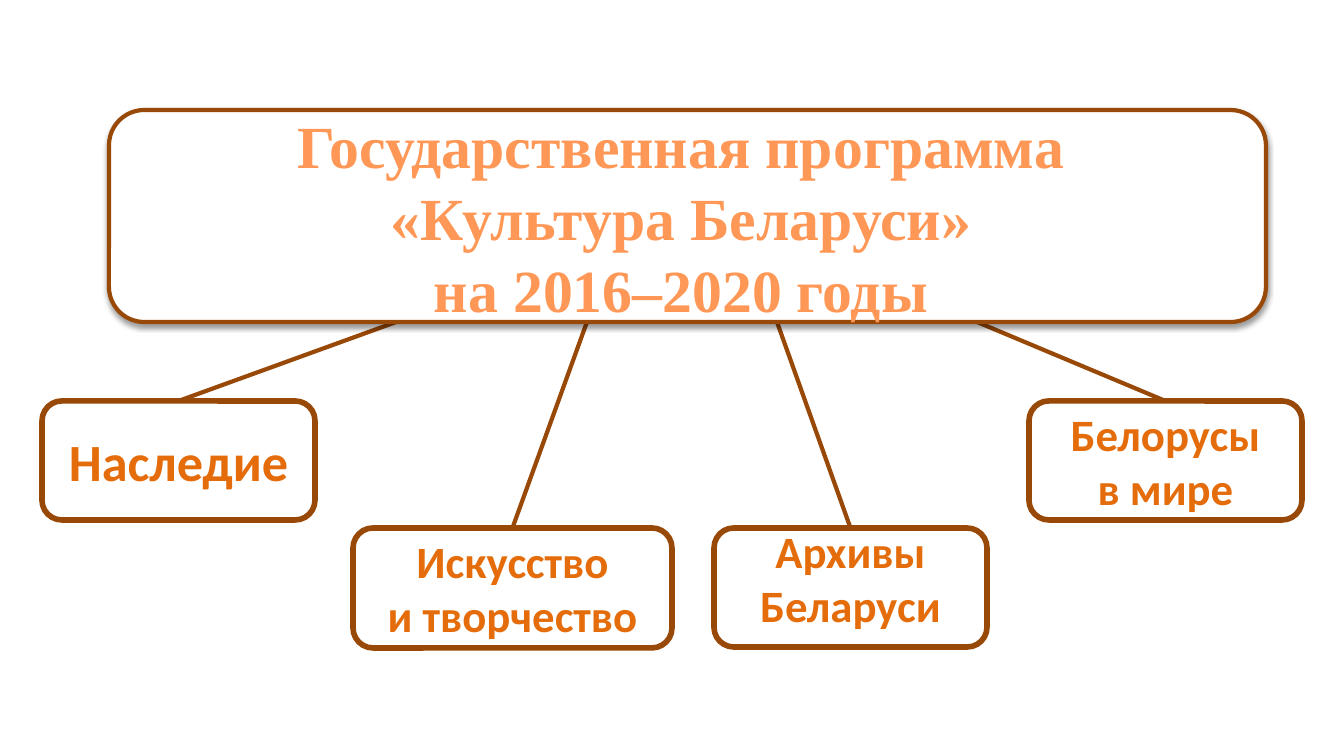
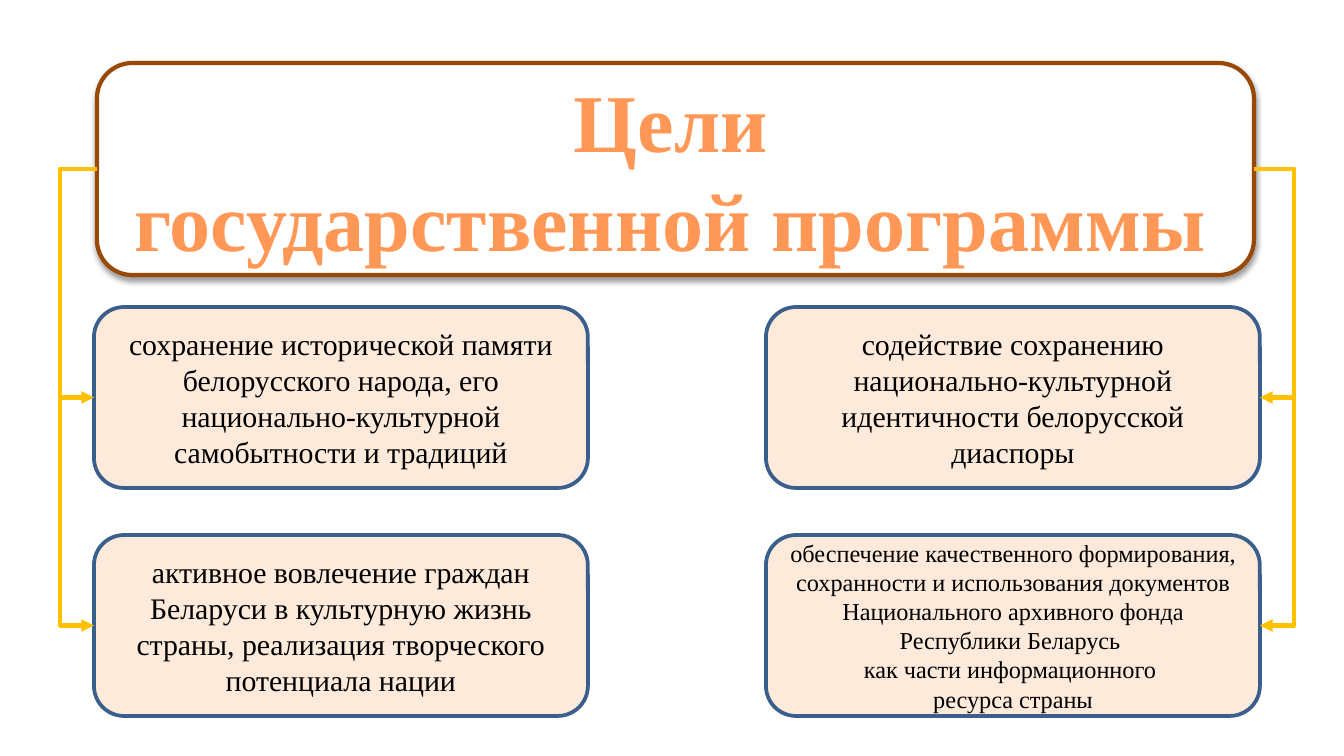
from lxml import etree
from pptx import Presentation
from pptx.dml.color import RGBColor
from pptx.enum.shapes import MSO_CONNECTOR, MSO_SHAPE
from pptx.enum.text import MSO_ANCHOR, MSO_AUTO_SIZE, PP_ALIGN
from pptx.oxml import parse_xml
from pptx.oxml.ns import nsdecls, qn
from pptx.util import Pt

ROUNDED = MSO_SHAPE.ROUNDED_RECTANGLE
STRAIGHT, ELBOW = MSO_CONNECTOR.STRAIGHT, MSO_CONNECTOR.ELBOW
MIDDLE, CENTER = MSO_ANCHOR.MIDDLE, PP_ALIGN.CENTER
FIT_TEXT = MSO_AUTO_SIZE.SHAPE_TO_FIT_TEXT
TOP, LEFT, RIGHT = 0, 1, 3

WHITE = RGBColor(0xFF, 0xFF, 0xFF)
BLACK = RGBColor(0x00, 0x00, 0x00)
BROWN = RGBColor(0x98, 0x48, 0x07)
ORANGE = RGBColor(0xE4, 0x6C, 0x0A)
PEACH = RGBColor(0xFD, 0xEA, 0xDA)
BLUE = RGBColor(0x3A, 0x5F, 0x8C)
GOLD = RGBColor(0xFF, 0xC0, 0x00)
TITLE_STOPS = [(0, "9D4700"), (78, "FF9856"), (100, "FFF5F1")]
SERIF, SANS = "Times New Roman", "Calibri"

SLIDE_W, SLIDE_H = 1344, 756
BANNER_W, BANNER_H = 1157, 212
PX = 9144000 / SLIDE_W


def add_panel(slide, box, fill, line, weight):
    panel = slide.shapes.add_shape(ROUNDED, *[round(v * PX) for v in box])
    panel.shadow.inherit = False
    panel.fill.solid()
    panel.fill.fore_color.rgb = fill
    panel.line.color.rgb = line
    panel.line.width = Pt(weight)
    return panel


def format_text(frame, font_name, size, bold, color=None):
    """Without a colour the text gets the title gradient."""
    frame.word_wrap = True
    frame.vertical_anchor = MIDDLE
    for paragraph in frame.paragraphs:
        paragraph.alignment = CENTER
        for run in paragraph.runs:
            run.font.name = font_name
            run.font.size = Pt(size)
            run.font.bold = bold
            if color is not None:
                run.font.color.rgb = color
                continue
            run.font.fill.gradient()
            run.font.fill.gradient_angle = 270
            stops = run.font._element.find(".//" + qn("a:gsLst"))
            stops.clear()
            for position, value in TITLE_STOPS:
                stop = etree.SubElement(stops, qn("a:gs"), pos=str(position * 1000))
                etree.SubElement(stop, qn("a:srgbClr"), val=value)


prs = Presentation()
prs.slide_width, prs.slide_height = round(SLIDE_W * PX), round(SLIDE_H * PX)
title_only = prs.slide_layouts[5]
program_slide = prs.slides.add_slide(title_only)
goals_slide = prs.slides.add_slide(title_only)

# Slide 1: subprograms, each tied to the lower edge of the banner
subprograms = [
    ("Наследие", (42, 401, 273, 119), 28, 0, (399, 321)),
    ("Искусство\nи творчество", (353, 528, 319, 120), 24, 0, (587, 322)),
    ("Архивы Беларуси", (714, 528, 273, 119), 24, 20, (777, 322)),
    ("Белорусы\nв мире", (1029, 401, 273, 119), 24, 0, (977, 322)),
]
links = []
for text, box, size, lift, (start_x, start_y) in subprograms:
    subprogram = add_panel(program_slide, box, WHITE, BROWN, 3)
    subprogram.text_frame.text = text
    format_text(subprogram.text_frame, SANS, size, True, ORANGE)
    subprogram.text_frame.margin_bottom = round((7 + lift) * PX)
    link = program_slide.shapes.add_connector(
        STRAIGHT, round(start_x * PX), round(start_y * PX), 0, 0)
    link.end_connect(subprogram, TOP)
    link.line.color.rgb = BROWN
    links.append(link)

# Banners and titles of both slides
headings = [
    (program_slide, (109, 110), (163, 101, 1051, 231), 32,
     "Государственная программа \n«Культура Беларуси» \vна 2016–2020 годы "),
    (goals_slide, (97, 63), (112, 63, 1138, 212), 44,
     "Цели \vгосударственной программы "),
]
for slide, corner, title_box, size, text in headings:
    banner = add_panel(slide, (*corner, BANNER_W, BANNER_H), WHITE, BROWN, 2.25)
    banner.element.spPr.find(qn("a:effectLst")).append(parse_xml(
        f'<a:outerShdw {nsdecls("a")} blurRad="39370" dist="20320" dir="5400000" '
        'rotWithShape="0"><a:srgbClr val="000000"><a:alpha val="38000"/>'
        '</a:srgbClr></a:outerShdw>'))
    title = slide.shapes.title
    title.left, title.top, title.width, title.height = [round(v * PX) for v in title_box]
    title.text_frame.text = text
    title.text_frame.auto_size = FIT_TEXT
    format_text(title.text_frame, SERIF, size, True)
    banner.element.addnext(title.element)
goals_banner = banner

# Slide 2: goals in a two by two grid, with arrows around the outer sides
GOAL_W, GOAL_H, GOAL_TOP, GOAL_STEP = 494, 181, 307, 228
goals = [
    # goal left edge, side of the joints, width between ends, reach of the bend, texts
    (94, LEFT, 3, 37, [
        ("сохранение исторической памяти белорусского народа, его "
         "национально-культурной самобытности и традиций", 16),
        ("активное вовлечение граждан Беларуси в культурную жизнь страны, "
         "реализация творческого потенциала нации", 16)]),
    (766, RIGHT, 6, 40, [
        ("содействие сохранению национально-культурной идентичности "
         "белорусской диаспоры", 16),
        ("обеспечение качественного формирования, сохранности и использования "
         "документов Национального архивного фонда Республики Беларусь \v"
         "как части информационного \vресурса страны", 13)]),
]
for left, side, span, reach, column in goals:
    for row, (text, size) in enumerate(column):
        goal = add_panel(goals_slide, (left, GOAL_TOP + row * GOAL_STEP, GOAL_W, GOAL_H),
                         PEACH, BLUE, 2)
        goal.text_frame.text = text
        goal.text_frame.margin_left = goal.text_frame.margin_right = round(4 * PX)
        format_text(goal.text_frame, SERIF, size, False, BLACK)

        arrow = goals_slide.shapes.add_connector(ELBOW, 0, 0, 0, 0)
        arrow.begin_connect(goals_banner, side)
        arrow.end_connect(goal, side)
        arrow.line.color.rgb = GOLD
        properties = arrow.element.spPr
        if side == LEFT:
            properties.xfrm.flipH, properties.xfrm.flipV = False, True
            properties.xfrm.rot = 180
        bend = properties.find(".//" + qn("a:avLst"))
        etree.SubElement(bend, qn("a:gd"), name="adj1",
                         fmla=f"val {round(reach / span * 100000)}")
        etree.SubElement(arrow.line._get_or_add_ln(), qn("a:tailEnd"), type="triangle")
        links.append(arrow)

# Common look of all connectors
for link in links:
    link.line.width = Pt(2.25)
    etree.SubElement(link.element.spPr, qn("a:effectLst"))

prs.save("out.pptx")
